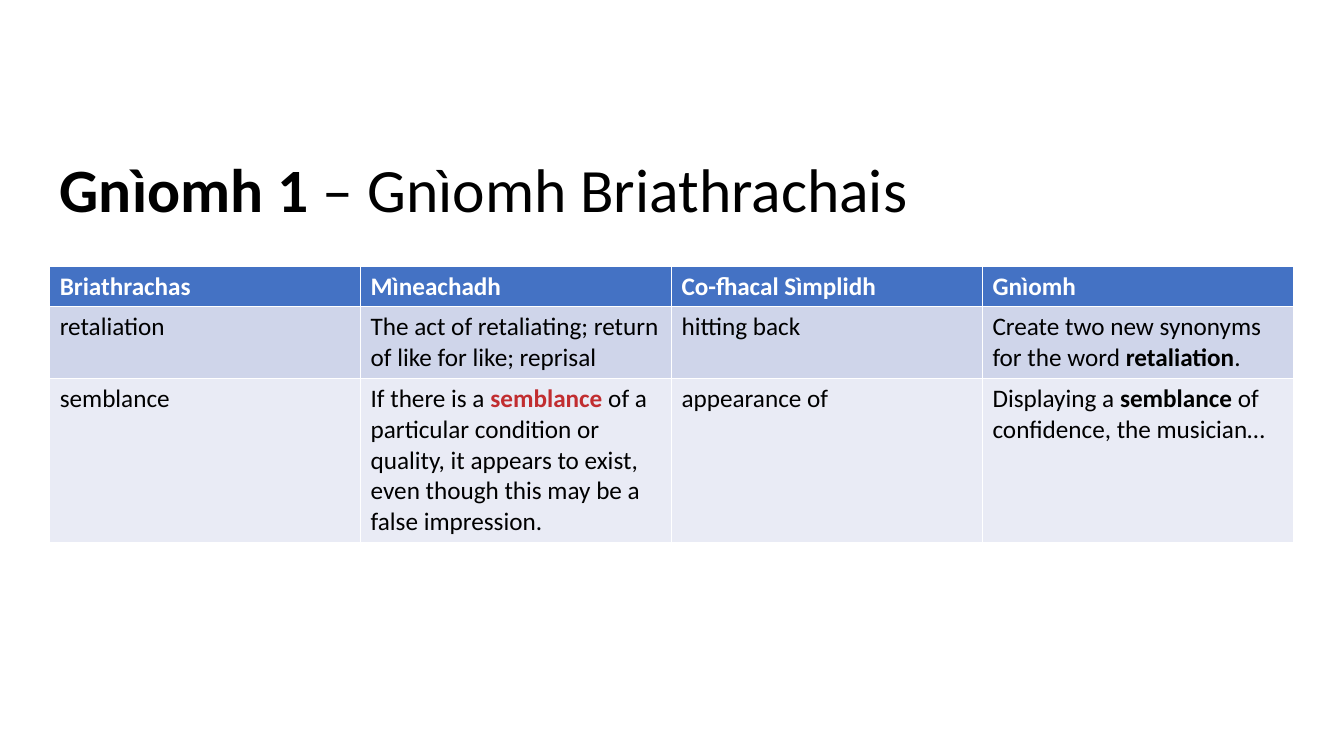
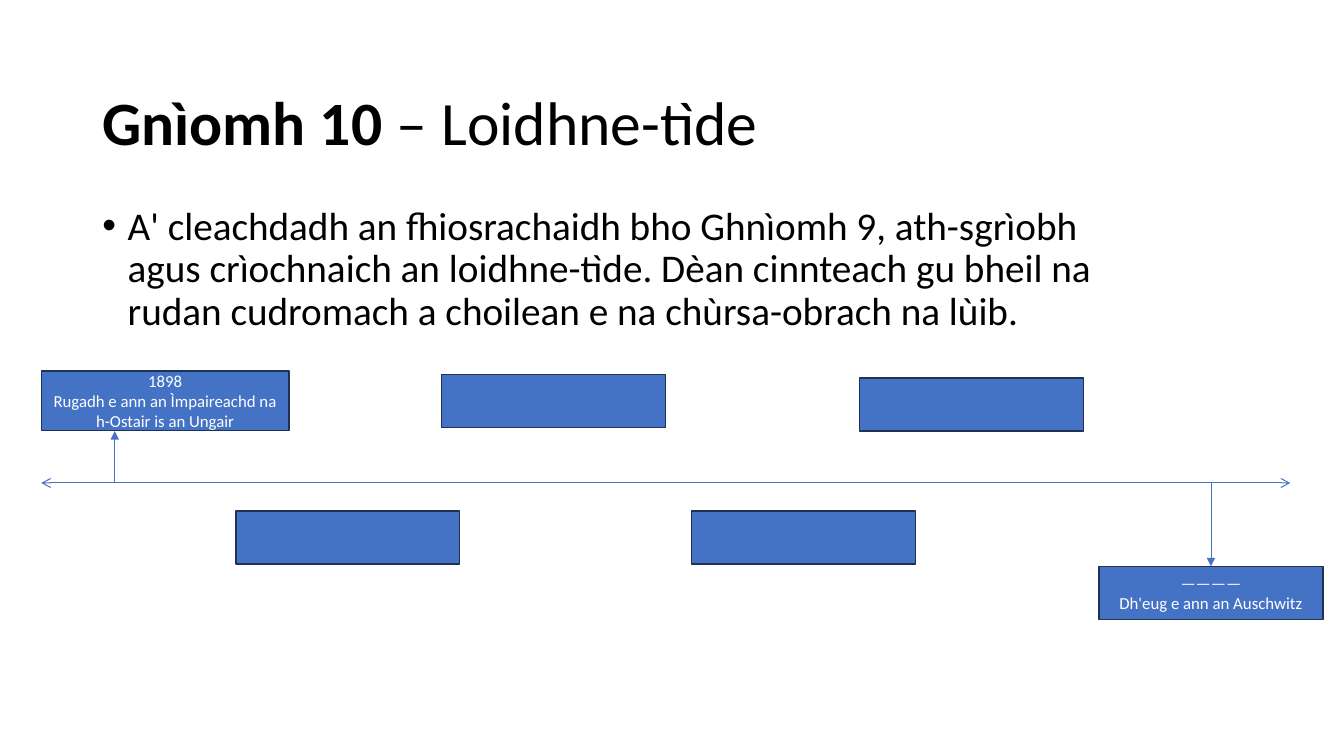
from lxml import etree
from pptx import Presentation
from pptx.dml.color import RGBColor
from pptx.enum.shapes import MSO_CONNECTOR as Connector, MSO_SHAPE as Shape
from pptx.enum.text import MSO_ANCHOR as Anchor, MSO_AUTO_SIZE as AutoSize, PP_ALIGN as Align
from pptx.oxml.ns import qn
from pptx.util import Pt

BLACK = RGBColor(0x00, 0x00, 0x00)
WHITE = RGBColor(0xFF, 0xFF, 0xFF)
BLUE = RGBColor(0x44, 0x72, 0xC4)
NAVY = RGBColor(0x1E, 0x32, 0x56)
RED = RGBColor(0xC1, 0x2D, 0x30)
BAND_DARK = RGBColor(0xCF, 0xD5, 0xEA)
BAND_LIGHT = RGBColor(0xE9, 0xEB, 0xF5)

FONT = "Calibri"
TITLE_ONLY, TITLE_AND_BODY = 5, 1

# Vocabulary table: **marks** stand for bold words
HEADINGS = ["Briathrachas", "Mìneachadh", "Co-fhacal Sìmplidh", "Gnìomh"]
WORDS = [
    ["retaliation",
     "The act of retaliating; return of like for like; reprisal",
     "hitting back",
     "Create two new synonyms for the word **retaliation**."],
    ["semblance",
     "If there is a **semblance **of a particular condition or quality, "
     "it appears to exist, even though this may be a false impression.",
     "appearance of",
     "Displaying a **semblance** of confidence, the musician…"],
]
ROW_HEIGHTS = [29, 51, 117]

# Timeline
AXIS_LEFT, AXIS_RIGHT, AXIS_Y = 29.5, 921.6, 345
BOX_WIDTH, BOX_HEIGHT = 160, 38
EMPTY_BOXES = [(168.5, 365), (315.5, 267.5), (494, 365), (614, 270)]


def place(shape, left, top, width, height):
    shape.left, shape.top = Pt(left), Pt(top)
    shape.width, shape.height = Pt(width), Pt(height)


def set_font(font, size, color):
    font.name, font.size = FONT, Pt(size)
    font.color.rgb = color


def write(para, text, size, color=BLACK, accent=None):
    """Write text with its **marked** parts in bold and in the accent colour."""
    set_font(para.font, size, color)
    for index, part in enumerate(text.split("**")):
        if not part:
            continue
        span = para.add_run()
        span.text = part
        if index % 2:
            span.font.bold = True
            if accent is not None:
                span.font.color.rgb = accent


def add_page(deck, layout, title, left, top):
    page = deck.slides.add_slide(deck.slide_layouts[layout])
    box = page.shapes.title
    place(box, left, top, 828, 104.4)
    frame = box.text_frame
    frame.auto_size = AutoSize.NONE
    frame.vertical_anchor = Anchor.MIDDLE
    para = frame.paragraphs[0]
    para.alignment = Align.LEFT
    para.line_spacing = 0.9
    write(para, title, 44)
    return page


def add_bullet(page, text):
    body = page.placeholders[1]
    place(body, 66, 144, 844.5, 342.5)
    frame = body.text_frame
    frame.auto_size = AutoSize.NONE
    frame.margin_right = Pt(108)
    para = frame.paragraphs[0]
    para.line_spacing = 0.9
    para.space_before = Pt(10)
    write(para, text, 28)
    props = para._p.get_or_add_pPr()
    props.set("marL", str(Pt(18)))
    props.set("indent", str(-Pt(18)))


def fill_cell(cell, text, fill, color=BLACK, bold=False, accent=None):
    cell.fill.solid()
    cell.fill.fore_color.rgb = fill
    para = cell.text_frame.paragraphs[0]
    write(para, text, 18, color, accent)
    if bold:
        para.font.bold = True


def add_word_table(page):
    table = page.shapes.add_table(
        len(WORDS) + 1, len(HEADINGS),
        Pt(35.5), Pt(190), Pt(888.4), Pt(sum(ROW_HEIGHTS))).table
    for row, height in zip(table.rows, ROW_HEIGHTS):
        row.height = Pt(height)
    for column, heading in enumerate(HEADINGS):
        fill_cell(table.cell(0, column), heading, BLUE, WHITE, bold=True)
    for row, texts in enumerate(WORDS, 1):
        band = BAND_DARK if row % 2 else BAND_LIGHT
        for column, text in enumerate(texts):
            accent = RED if column == 1 else None
            fill_cell(table.cell(row, column), text, band, accent=accent)


def add_event(page, left, top, lines=(), width=BOX_WIDTH, height=BOX_HEIGHT):
    box = page.shapes.add_shape(
        Shape.RECTANGLE, Pt(left), Pt(top), Pt(width), Pt(height))
    box.shadow.inherit = False
    box.fill.solid()
    box.fill.fore_color.rgb = BLUE
    box.line.color.rgb = NAVY
    box.line.width = Pt(1)
    frame = box.text_frame
    frame.word_wrap = True
    frame.vertical_anchor = Anchor.MIDDLE
    for index, line in enumerate(lines):
        para = frame.add_paragraph() if index else frame.paragraphs[0]
        para.alignment = Align.CENTER
        write(para, line, 12, WHITE)
    return box


def add_arrow(page, start, end, width, head=None, tail=None):
    arrow = page.shapes.add_connector(
        Connector.STRAIGHT, *(Pt(value) for value in (*start, *end)))
    arrow.line.color.rgb = BLUE
    arrow.line.width = Pt(width)
    line = arrow.line._get_or_add_ln()
    for tag, kind in (("a:headEnd", head), ("a:tailEnd", tail)):
        if kind:
            etree.SubElement(line, qn(tag), type=kind)
    etree.SubElement(arrow._element.spPr, qn("a:effectLst"))
    return arrow


def add_timeline(page):
    add_arrow(page, (AXIS_LEFT, AXIS_Y), (AXIS_RIGHT, AXIS_Y), 0.75,
              head="arrow", tail="arrow")
    for left, top in EMPTY_BOXES:
        add_event(page, left, top)

    # Birth, above the axis
    add_event(page, AXIS_LEFT, 265,
              ["1898", "Rugadh e ann an Ìmpaireachd na h-Ostair is an Ungair"],
              width=177, height=42.5)
    add_arrow(page, (82, AXIS_Y), (82, 308), 0.5, tail="triangle")

    # Death, below the axis
    left, top = 785, 404.5
    death = add_event(page, left, top, ["————", "Dh'eug e ann an Auschwitz"])
    middle = left + BOX_WIDTH / 2
    arrow = add_arrow(page, (middle, AXIS_Y), (middle, top), 0.5,
                      tail="triangle")
    arrow.end_connect(death, 0)


def main():
    deck = Presentation()
    deck.slide_width, deck.slide_height = Pt(960), Pt(540)

    # Slide 1: vocabulary
    page = add_page(deck, TITLE_ONLY, "**Gnìomh 1 **– Gnìomh Briathrachais",
                    35.5, 85.5)
    add_word_table(page)

    # Slide 2: timeline
    page = add_page(deck, TITLE_AND_BODY, "**Gnìomh 10 **– Loidhne-tìde",
                    66, 37.5)
    add_bullet(page, "A' cleachdadh an fhiosrachaidh bho Ghnìomh 9, "
                     "ath-sgrìobh agus crìochnaich an loidhne-tìde. "
                     "Dèan cinnteach gu bheil na rudan cudromach a choilean e "
                     "na chùrsa-obrach na lùib.")
    add_timeline(page)

    deck.save("out.pptx")


if __name__ == "__main__":
    main()
